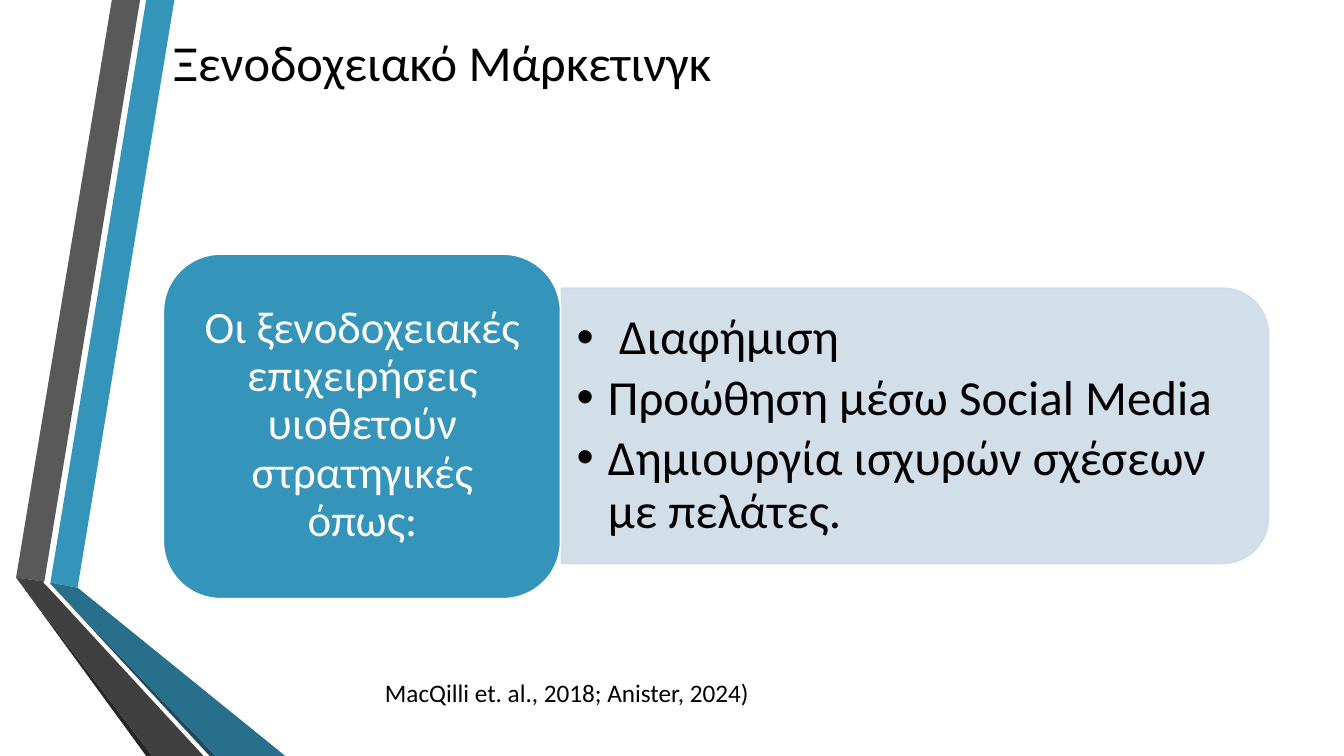
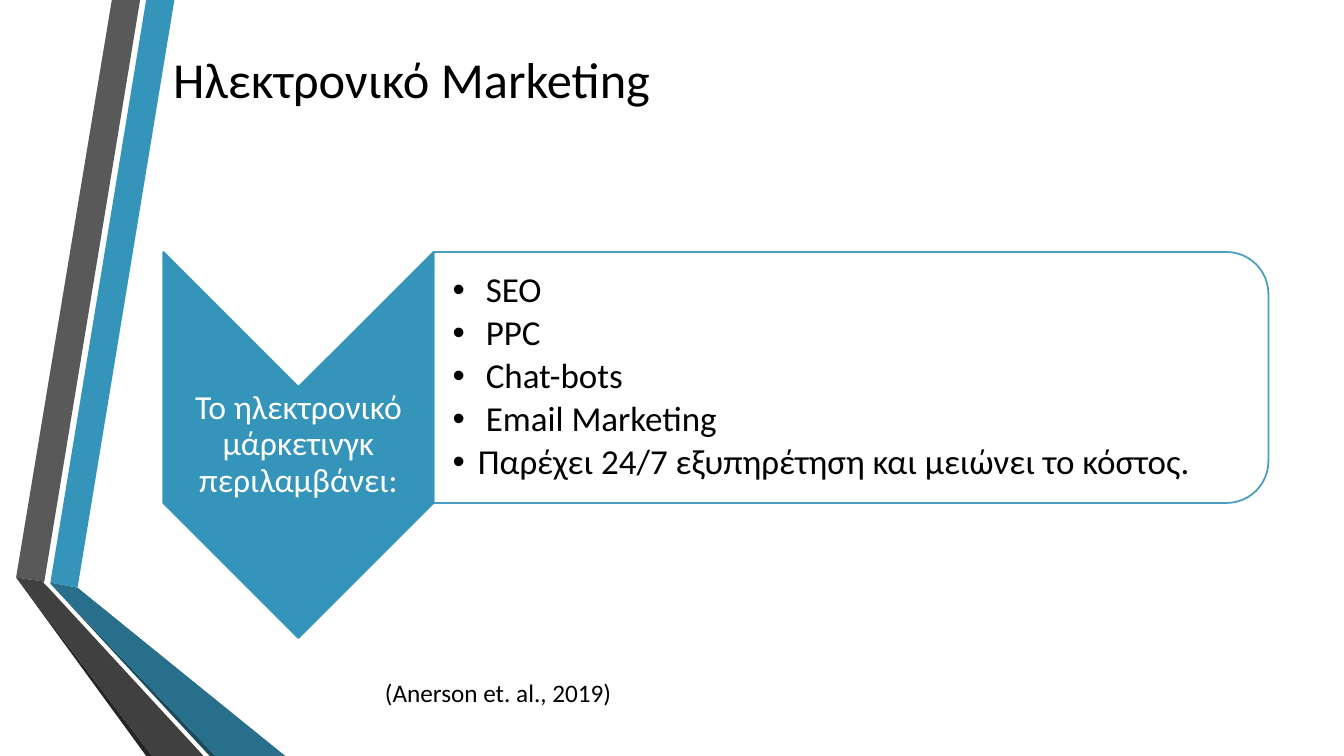
from lxml.etree import SubElement
from pptx import Presentation
from pptx.dml.color import RGBColor
from pptx.enum.shapes import MSO_SHAPE
from pptx.enum.text import MSO_ANCHOR, PP_ALIGN
from pptx.oxml.ns import qn
from pptx.util import Inches, Pt

FONT = "Calibri"
BLUE, BLACK, WHITE, PALE = "3494BA", "000000", "FFFFFF", "CEDCE7"

BANDS = [
    (BLUE, [(0.5, 5.78), (0.77, 5.83), (1.73, 0), (1.45, 0)]),
    ("595959", [(1.39, 0), (1.11, 0), (0.16, 5.73), (0.44, 5.77)]),
    ("262626", [(0.16, 5.73), (1.45, 7.5), (1.51, 7.5)]),
    ("1A4A5D", [(0.5, 5.79), (2.08, 7.5), (2.14, 7.5)]),
    ("276F8B", [(0.5, 5.79), (2.14, 7.5), (2.83, 7.5), (0.77, 5.83), (0.5, 5.78)]),
    ("404040", [(2.02, 7.5), (0.48, 5.83), (0.43, 5.78), (0.44, 5.77),
                (0.16, 5.73), (1.51, 7.5)]),
]

SLIDES = [
    {
        "title": "Ξενοδοχειακό Μάρκετινγκ",
        "title_box": (1.62, -0.35, 10.96, 1.92),
        "lead": "Οι ξενοδοχειακές επιχειρήσεις υιοθετούν στρατηγικές όπως:",
        "lead_box": (1.79, 2.68, 3.61, 3.08),
        "lead_size": 32,
        "lead_pad": (0.13, 0.13),
        "block": (MSO_SHAPE.ROUNDED_RECTANGLE, (1.62, 2.52, 3.94, 3.42), 0, WHITE),
        "panel": (5.57, 2.86, 7.01, 2.73),
        "panel_look": (PALE, PALE),
        "items": [" Διαφήμιση", "Προώθηση μέσω Social Media",
                  "Δημιουργία ισχυρών σχέσεων με πελάτες."],
        "item_size": 35,
        "item_pad": (0.15, 0.28),
        "indent": 0.31,
        "cite": "MacQilli et. al., 2018; Anister, 2024)",
    },
    {
        "title": "Ηλεκτρονικό Marketing",
        "title_box": (1.62, 0.12, 10.96, 1.32),
        "lead": "Το ηλεκτρονικό μάρκετινγκ περιλαμβάνει:",
        "lead_box": (1.62, 3.84, 2.68, 1.15),
        "lead_size": 24,
        "lead_pad": (0.02, 0.02),
        "block": (MSO_SHAPE.CHEVRON, (1.62, 2.5, 2.68, 3.83), 90, BLUE),
        "panel": (4.3, 2.5, 8.28, 2.49),
        "panel_look": (WHITE, BLUE),
        "items": [" SEO", " PPC", " Chat-bots", " Email Marketing",
                  "Παρέχει 24/7 εξυπηρέτηση και μειώνει το κόστος."],
        "item_size": 25,
        "item_pad": (0.19, 0.14),
        "indent": 0.25,
        "cite": "(Anerson et. al., 2019)",
    },
]


def rgb(code):
    """Turn a hex string into a colour."""
    return RGBColor.from_string(code)


def paint(shape, fill, line=None):
    """Give a shape a flat fill and an optional outline."""
    shape.shadow.inherit = False
    shape.fill.solid()
    shape.fill.fore_color.rgb = rgb(fill)
    if line:
        shape.line.color.rgb = rgb(line)
        shape.line.width = Pt(1.25)
    else:
        shape.line.fill.background()


def fade(shape, share):
    """Set the opacity of a shape's fill and outline."""
    for tag in ("a:solidFill", "a:ln/a:solidFill"):
        steps = "/".join(qn(part) for part in tag.split("/"))
        tint = shape.fill._xPr.find(steps)[0]
        SubElement(tint, qn("a:alpha")).set("val", str(share * 1000))


def draw(slide, kind, box, turn, fill, line):
    """Draw a preset shape that covers the box after its turn."""
    x, y, w, h = box
    if turn == 90:
        x, y, w, h = x + (w - h) / 2, y + (h - w) / 2, h, w
    shape = slide.shapes.add_shape(kind, *map(Inches, (x, y, w, h)))
    shape.rotation = turn
    paint(shape, fill, line)
    return shape


def write(slide, box, lines, size, color=BLACK, pad=(0.1, 0.1),
          align=PP_ALIGN.LEFT, space=1.0, indent=0):
    """Write paragraphs in a text box, with bullets when indented."""
    frame = slide.shapes.add_textbox(*map(Inches, box)).text_frame
    frame.word_wrap = True
    frame.vertical_anchor = MSO_ANCHOR.MIDDLE
    frame.margin_left, frame.margin_right = map(Inches, pad)
    for n, line in enumerate(lines):
        para = frame.add_paragraph() if n else frame.paragraphs[0]
        para.text = line
        para.alignment = align
        para.line_spacing = space
        if indent:
            props = para._p.get_or_add_pPr()
            props.set("marL", str(Inches(indent)))
            props.set("indent", str(-Inches(indent)))
            SubElement(props, qn("a:buFont")).set("typeface", "Arial")
            SubElement(props, qn("a:buChar")).set("char", "•")
            para.space_after = Pt(size * 0.15)
        for run in para.runs:
            run.font.name = FONT
            run.font.size = Pt(size)
            run.font.color.rgb = rgb(color)


def frame_bands(slide):
    """Draw the folded bands along the left edge."""
    for color, dots in BANDS:
        ends = [(Inches(x), Inches(y)) for x, y in dots]
        path = slide.shapes.build_freeform(*ends[0])
        path.add_line_segments(ends[1:])
        paint(path.convert_to_shape(), color)


def build(deck, data):
    """Add one slide with its title, block, panel and source."""
    slide = deck.slides.add_slide(deck.slide_layouts[6])
    frame_bands(slide)
    write(slide, data["title_box"], [data["title"]], 36)
    panel = draw(slide, MSO_SHAPE.ROUND_2_SAME_RECTANGLE, data["panel"], 90,
                 *data["panel_look"])
    fade(panel, 90)
    write(slide, data["panel"], data["items"], data["item_size"],
          pad=data["item_pad"], space=0.9, indent=data["indent"])
    kind, box, turn, line = data["block"]
    draw(slide, kind, box, turn, BLUE, line)
    write(slide, data["lead_box"], [data["lead"]], data["lead_size"], WHITE,
          data["lead_pad"], PP_ALIGN.CENTER, 0.9)
    write(slide, (3.72, 6.67, 4.77, 0.4), [data["cite"]], 18)


def main():
    """Build and save the deck."""
    deck = Presentation()
    deck.slide_width, deck.slide_height = Inches(13.33), Inches(7.5)
    for data in SLIDES:
        build(deck, data)
    deck.save("out.pptx")


if __name__ == "__main__":
    main()
